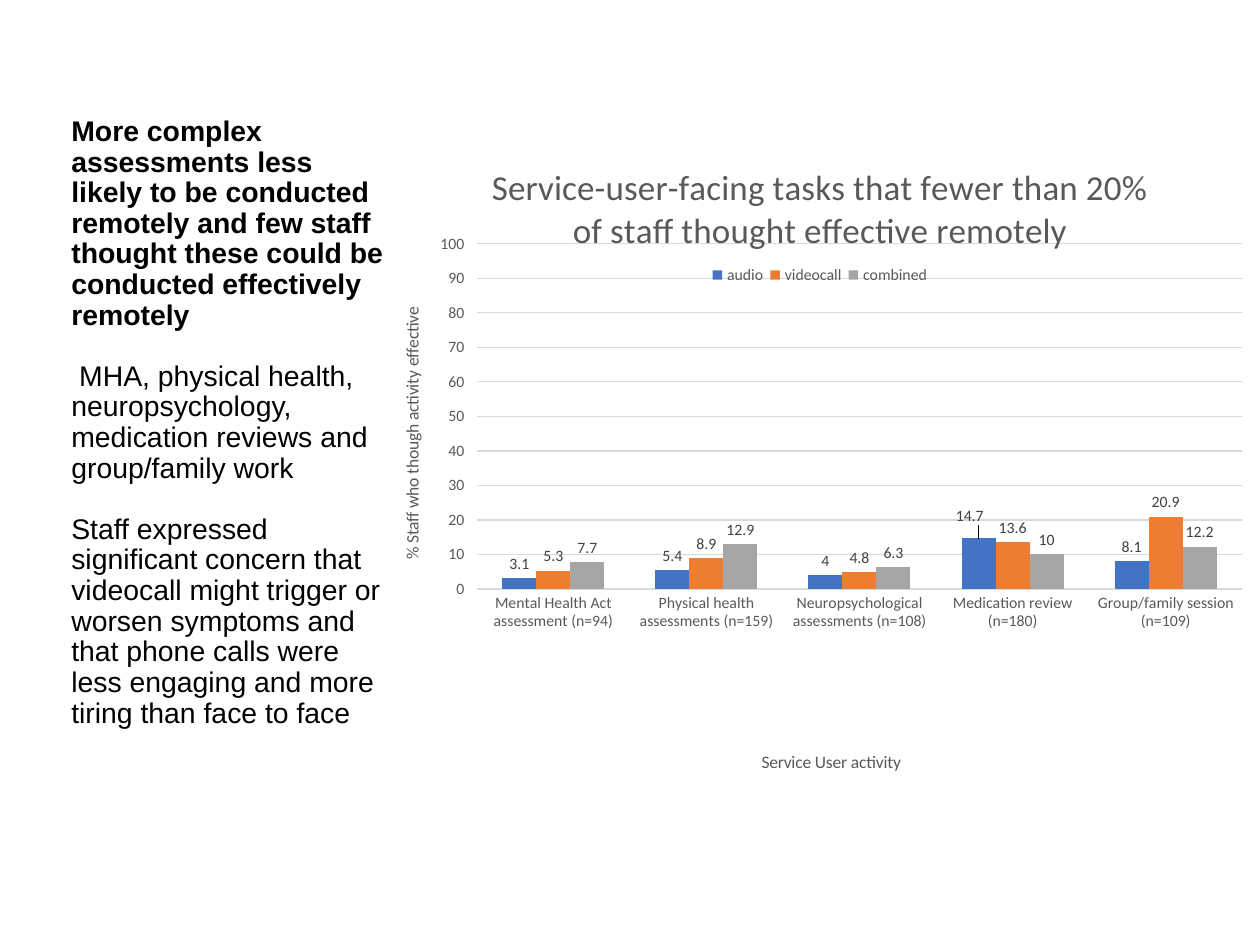
"""Build a slide on remote service-user tasks: a text column beside a clustered column chart."""
from lxml import etree
from pptx import Presentation
from pptx import util as u
from pptx.chart.data import CategoryChartData
from pptx.dml.color import RGBColor
from pptx.enum import chart as ch, text
from pptx.oxml.ns import qn

PX = 914400 // 126
BLACK = RGBColor(0x00, 0x00, 0x00)
DARK = RGBColor(0x40, 0x40, 0x40)
GREY = RGBColor(0x59, 0x59, 0x59)
PALE = RGBColor(0xD9, 0xD9, 0xD9)
BLUE = RGBColor(0x44, 0x72, 0xC4)
ORANGE = RGBColor(0xED, 0x7D, 0x31)
SILVER = RGBColor(0xA5, 0xA5, 0xA5)


def style(font, size, color, name="Calibri", bold=False):
    font.name, font.size, font.bold = name, u.Pt(size), bold
    font.color.rgb = color


def place(node, spot, **vals):
    for old in node.findall(qn("c:layout")):
        node.remove(old)
    layout = etree.Element(qn("c:layout"))
    manual = etree.SubElement(layout, qn("c:manualLayout"))
    for key, val in vals.items():
        etree.SubElement(manual, qn("c:" + key)).set("val", str(val))
    node.insert(spot, layout)


deck = Presentation()
deck.slide_width, deck.slide_height = u.Inches(10), u.Inches(7.5)
slide = deck.slides.add_slide(deck.slide_layouts[6])

box = slide.shapes.add_textbox(59 * PX, 102 * PX, 341 * PX, 677 * PX)
frame = box.text_frame
frame.word_wrap = True
frame.vertical_anchor = text.MSO_ANCHOR.TOP
frame.margin_top = 15 * PX
notes = [
    "More complex assessments less likely to be conducted remotely and few staff "
    "thought these could be conducted effectively remotely",
    " MHA, physical health, neuropsychology, medication reviews and group/family work",
    "Staff expressed significant concern that videocall might trigger or worsen symptoms "
    "and that phone calls were less engaging and more tiring than face to face",
]
for i, note in enumerate(notes):
    para = frame.add_paragraph() if i else frame.paragraphs[0]
    para.text = note
    para.line_spacing = 0.9
    para.space_before = u.Pt(17.5 if i else 0)
    style(para.font, 16.2, BLACK, "Arial", i == 0)

data = CategoryChartData()
data.categories = [
    "Mental Health Act assessment (n=94)",
    "Physical health assessments (n=159)",
    "Neuropsychological assessments (n=108)",
    "Medication review (n=180)",
    "Group/family session (n=109)",
]
data.add_series("audio", [3.1, 5.4, 4, 14.7, 8.1])
data.add_series("videocall", [5.3, 8.9, 4.8, 13.6, 20.9])
data.add_series("combined", [7.7, 12.9, 6.3, 10, 12.2])
chart = slide.shapes.add_chart(
    ch.XL_CHART_TYPE.COLUMN_CLUSTERED, 380 * PX, 123 * PX, 880 * PX, 822 * PX, data
).chart
style(chart.font, 10, BLACK)

plot = chart.plots[0]
plot.gap_width, plot.overlap = 150, 0
plot.vary_by_categories = False
for series, color in zip(plot.series, [BLUE, ORANGE, SILVER]):
    series.format.fill.solid()
    series.format.fill.fore_color.rgb = color
    series.invert_if_negative = False
    labels = series.data_labels
    labels.show_value = True
    labels.position = ch.XL_LABEL_POSITION.OUTSIDE_END
    style(labels.font, 9, DARK)

label = plot.series[0].points[3].data_label
label.position = ch.XL_LABEL_POSITION.OUTSIDE_END
style(label.font, 9, DARK)
mark = plot.series[0].data_labels._element.find(qn("c:dLbl"))
place(mark, 1, x=-0.01, y=-0.01)

cat, val = chart.category_axis, chart.value_axis
cat.major_tick_mark = ch.XL_TICK_MARK.NONE
cat.format.line.color.rgb = PALE
cat.format.line.width = u.Pt(0.75)
val.minimum_scale, val.maximum_scale, val.major_unit = 0, 100, 10
val.major_tick_mark = ch.XL_TICK_MARK.OUTSIDE
val.format.line.fill.background()
grid = val.major_gridlines.format.line
grid.color.rgb, grid.width = PALE, u.Pt(0.75)
for axis in (cat, val):
    style(axis.tick_labels.font, 9, GREY)

titles = [
    (chart.chart_title, "Service-user-facing tasks that fewer than 20% of staff thought effective remotely",
     20, 0.12, 0.04),
    (cat.axis_title, "Service User activity", 10, 0.43, 0.76),
    (val.axis_title, "% Staff who though activity effective", 10, 0.02, 0.22),
]
for title, words, size, x, y in titles:
    para = title.text_frame.paragraphs[0]
    para.text = words
    style(para.font, size, GREY)
    place(title._element, 1, xMode="edge", yMode="edge", x=x, y=y)

chart.has_legend = True
legend = chart.legend
legend.position = ch.XL_LEGEND_POSITION.TOP
legend.include_in_layout = True
style(legend.font, 9, GREY)
place(legend._element, 1, xMode="edge", yMode="edge", x=0.37, y=0.17, w=0.26, h=0.03)
area = chart._chartSpace.find(".//" + qn("c:plotArea"))
place(area, 0, layoutTarget="inner", xMode="edge", yMode="edge", x=0.11, y=0.147, w=0.87, h=0.42)

deck.save("out.pptx")
